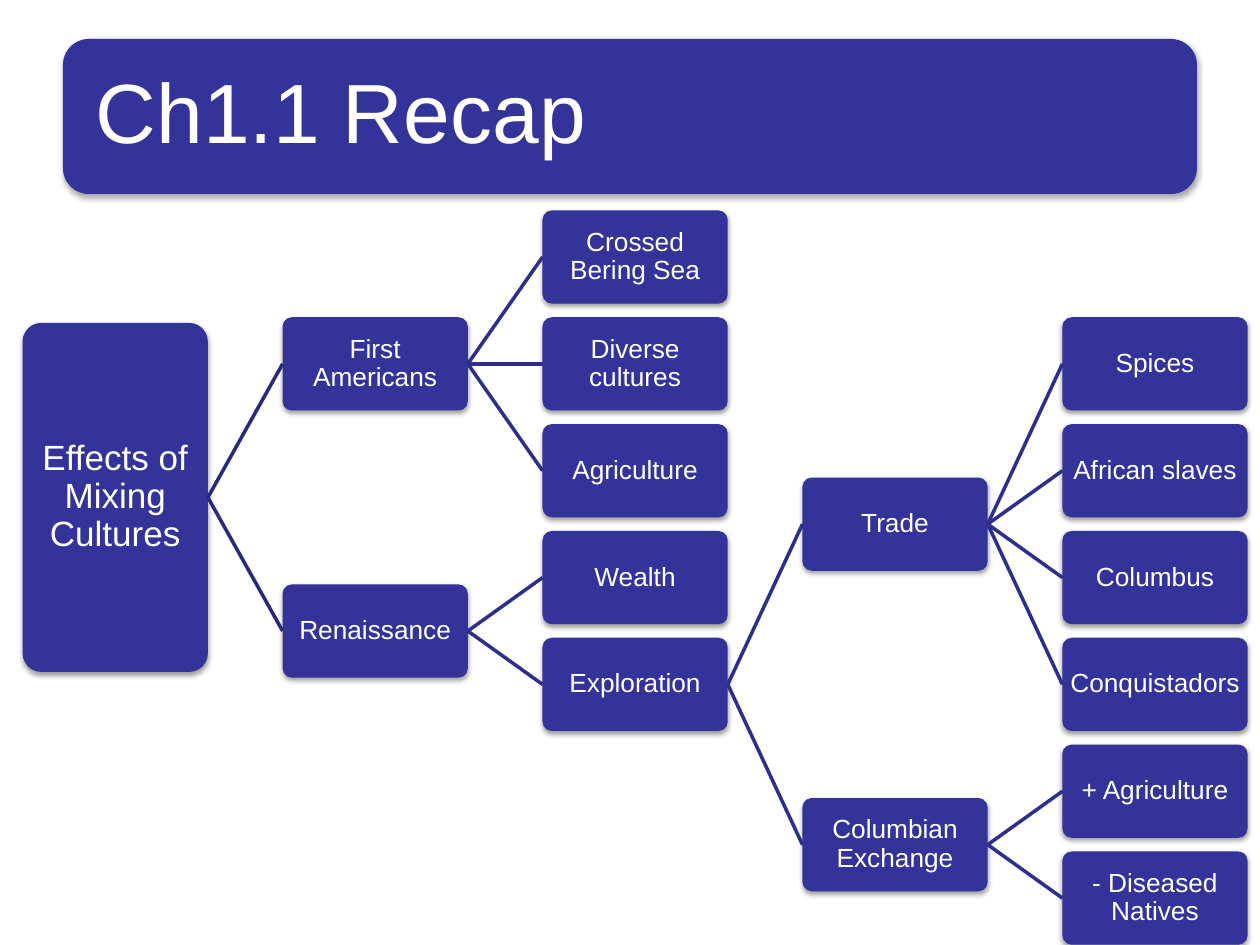
from lxml import etree
from pptx import Presentation, util as u
from pptx.dml.color import RGBColor
from pptx.enum import shapes, text
from pptx.oxml import ns

deck = Presentation()
deck.slide_width, deck.slide_height = u.Inches(10), u.Inches(7.5)
page = deck.slides.add_slide(deck.slide_layouts[5])
colour = RGBColor.from_string

FILL, WHITE = "333399", "FFFFFF"
LEFT, COLUMN = 0.18, 2.063          # left edge of the first column, column pitch
FIRST_ROW, ROW = 2.04, 0.848        # centre of the first row, row pitch
BOX_WIDTH, BOX_HEIGHT = 1.47, 0.74


def add_panel(left, top, width, height, shadow_alpha, shadow_distance):
    """Add a filled rounded rectangle with a soft shadow below it."""
    panel = page.shapes.add_shape(shapes.MSO_SHAPE.ROUNDED_RECTANGLE,
                                  *map(u.Inches, (left, top, width, height)))
    panel.fill.solid()
    panel.fill.fore_color.rgb = colour(FILL)
    panel.line.fill.background()
    panel.shadow.inherit = False
    effects = panel._element.spPr.find(ns.qn("a:effectLst"))
    shadow = etree.SubElement(effects, ns.qn("a:outerShdw"), blurRad=str(u.Pt(3.1)),
                              dist=str(u.Pt(shadow_distance)), dir="5400000",
                              algn="ctr", rotWithShape="0")
    shade = etree.SubElement(shadow, ns.qn("a:srgbClr"), val="000000")
    etree.SubElement(shade, ns.qn("a:alpha"), val=str(shadow_alpha * 1000))
    return panel


def write(box, wording, size, align, inset):
    frame = box.text_frame
    frame.text = wording
    frame.word_wrap = True
    frame.auto_size = text.MSO_AUTO_SIZE.NONE
    frame.vertical_anchor = text.MSO_ANCHOR.MIDDLE
    frame.margin_left = frame.margin_right = u.Inches(inset)
    frame.margin_top = frame.margin_bottom = u.Inches(inset)
    para = frame.paragraphs[0]
    para.alignment = align
    para.line_spacing = 0.9
    font = para.runs[0].font
    font.name, font.size = "Arial", u.Pt(size)
    font.color.rgb = colour(WHITE)


# Title on its banner
banner = add_panel(0.5, 0.31, 9, 1.23, 35, 1.8)
title = page.shapes.title
title.left, title.top, title.width, title.height = map(u.Inches, (0.56, 0.37, 8.88, 1.11))
write(title, "Ch1.1 Recap", 48, text.PP_ALIGN.LEFT, 0.2)
title._element.addprevious(banner._element)

# Tree nodes: wording, column, row, parent
root = "Effects of Mixing Cultures"
nodes = [
    (root, 0, 2.25, None),
    ("First Americans", 1, 1, root),
    ("Crossed Bering Sea", 2, 0, "First Americans"),
    ("Diverse cultures", 2, 1, "First Americans"),
    ("Agriculture", 2, 2, "First Americans"),
    ("Renaissance", 1, 3.5, root),
    ("Wealth", 2, 3, "Renaissance"),
    ("Exploration", 2, 4, "Renaissance"),
    ("Trade", 3, 2.5, "Exploration"),
    ("Spices", 4, 1, "Trade"),
    ("African slaves", 4, 2, "Trade"),
    ("Columbus", 4, 3, "Trade"),
    ("Conquistadors", 4, 4, "Trade"),
    ("Columbian Exchange", 3, 5.5, "Exploration"),
    ("+ Agriculture", 4, 5, "Columbian Exchange"),
    ("- Diseased Natives", 4, 6, "Columbian Exchange"),
]
RIGHT_SITE, LEFT_SITE = 3, 1
boxes = {}
for wording, column, row, parent in nodes:
    height = BOX_HEIGHT if parent else 2.77
    box = add_panel(LEFT + column * COLUMN, FIRST_ROW + row * ROW - height / 2,
                    BOX_WIDTH, height, 38, 1.6)
    box.adjustments[0] = 0.1
    write(box, wording, 15 if parent else 20, text.PP_ALIGN.CENTER, 0.03)
    boxes[wording] = box
    if parent:
        branch = page.shapes.add_connector(shapes.MSO_CONNECTOR.STRAIGHT, 0, 0, 0, 0)
        branch.begin_connect(boxes[parent], RIGHT_SITE)
        branch.end_connect(box, LEFT_SITE)
        branch.line.width = u.Pt(2)
        branch.line.color.rgb = colour("29297B" if parent == root else "2E2E8B")
        etree.SubElement(branch._element.spPr, ns.qn("a:effectLst"))

deck.save("out.pptx")
